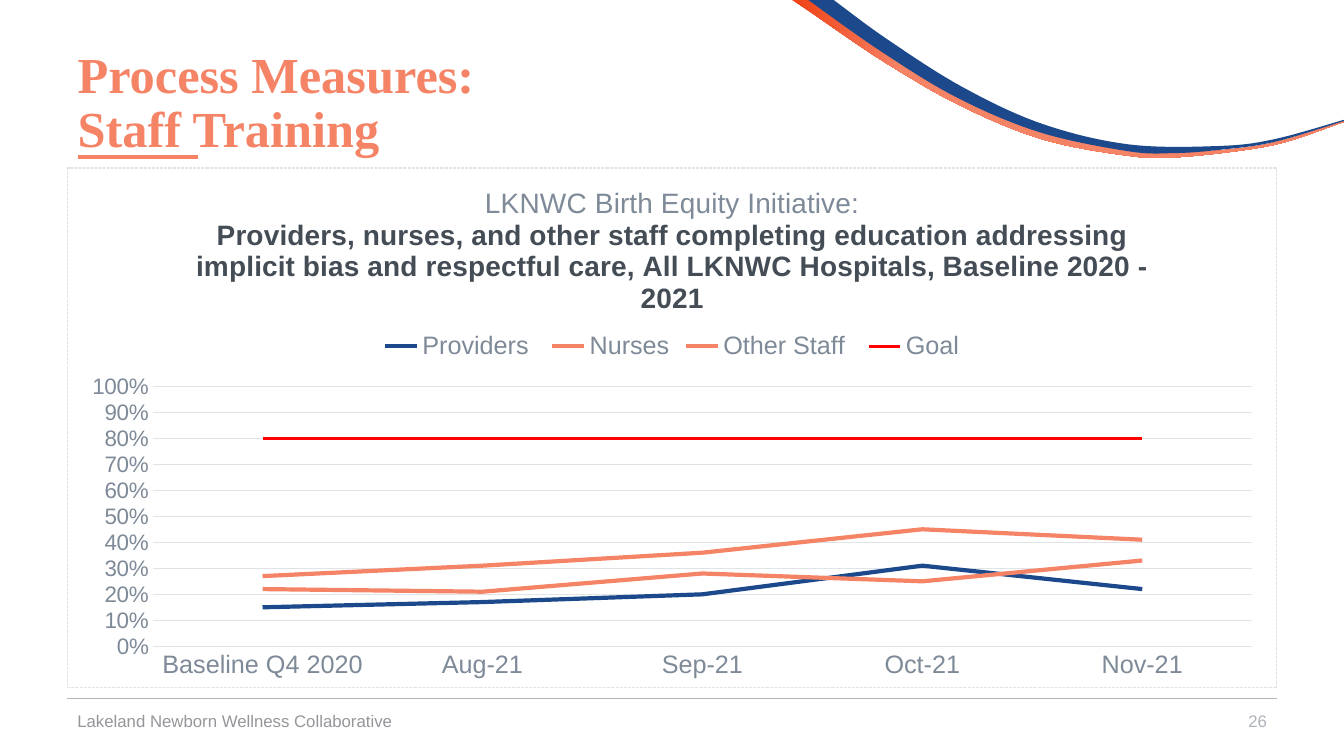
from lxml import etree
from pptx import Presentation
from pptx.chart.data import CategoryChartData
from pptx.dml.color import RGBColor
from pptx.enum import chart as chart_enum, shapes, text
from pptx.oxml import parse_xml
from pptx.oxml.ns import nsdecls, qn
from pptx.util import Cm, Pt

NAVY = RGBColor(0x1C, 0x49, 0x8B)
CORAL = RGBColor(0xF5, 0x83, 0x66)
TITLE_CORAL = RGBColor(0xF5, 0x84, 0x66)
ORANGE = RGBColor(0xF0, 0x41, 0x15)
RED = RGBColor(0xFF, 0x00, 0x00)
SLATE = RGBColor(0x44, 0x4C, 0x55)
GREY_BLUE = RGBColor(0x7E, 0x8A, 0x98)
FOOTER_GREY = RGBColor(0x94, 0x96, 0x99)
RULE_GREY = RGBColor(0xAF, 0xB3, 0xB9)
GRID_GREY = RGBColor(0xE1, 0xE4, 0xE7)


def style_font(font, size, color, name="Arial", bold=False):
    font.size, font.name, font.bold = Pt(size), name, bold
    font.color.rgb = color


def smooth_edge(points, steps=10):
    """Return points in Cm on a Catmull-Rom curve through the given (x, y) points."""
    padded = [points[0], *points, points[-1]]
    curve = []
    for a, b, c, d in zip(padded, padded[1:], padded[2:], padded[3:]):
        for step in range(steps):
            t = step / steps
            curve.append(tuple(
                Cm(0.5 * (2 * q + (r - p) * t + (2 * p - 5 * q + 4 * r - s) * t ** 2
                          + (3 * q - p - 3 * r + s) * t ** 3))
                for p, q, r, s in zip(a, b, c, d)))
    return curve + [(Cm(points[-1][0]), Cm(points[-1][1]))]


presentation = Presentation()
presentation.slide_width, presentation.slide_height = Cm(33.87), Cm(19.05)
slide = presentation.slides.add_slide(presentation.slide_layouts[5])

# Ribbon across the top right corner: upper and lower edge of each band
ribbon_bands = [
    ([(20.45, 0), (22.4, 1.37), (24.33, 2.51), (26.39, 3.38), (28.58, 3.81),
      (29.67, 3.86), (31.34, 3.73), (32.44, 3.51), (33.87, 3.05)],
     [(33.87, 3.07), (32.46, 3.56), (31.37, 3.78), (29.69, 3.96), (28.55, 3.94),
      (26.34, 3.53), (24.26, 2.69), (22.3, 1.57), (20.42, 0.3), (19.96, 0)]),
    ([(21.01, 0), (22.33, 0.97), (24.23, 2.18), (26.26, 3.12), (28.45, 3.64),
      (30.71, 3.68), (32.11, 3.51), (33.87, 3.02)],
     [(33.87, 3.05), (32.11, 3.58), (30.71, 3.78), (29.57, 3.86), (28.42, 3.81),
      (26.19, 3.33), (24.08, 2.44), (22.12, 1.24), (20.37, 0)]),
]
bands = []
for upper_edge, lower_edge in ribbon_bands:
    outline = smooth_edge(upper_edge) + smooth_edge(lower_edge)
    builder = slide.shapes.build_freeform(*outline[0])
    builder.add_line_segments(outline[1:], close=True)
    band = builder.convert_to_shape()
    band.shadow.inherit = False
    band.line.fill.background()
    bands.append(band)
coral_band, navy_band = bands
coral_band.fill.gradient()
coral_band.fill.gradient_angle = 0
for stop, color, position in zip(coral_band.fill.gradient_stops, (ORANGE, CORAL), (0, 0.2)):
    stop.color.rgb, stop.position = color, position
navy_band.fill.solid()
navy_band.fill.fore_color.rgb = NAVY

# Footer rule and title underline
for left, right, top, color, width in [(1.7, 32.18, 17.6, RULE_GREY, 0.5),
                                       (1.96, 5, 3.96, CORAL, 2.5)]:
    rule = slide.shapes.add_connector(shapes.MSO_CONNECTOR.STRAIGHT,
                                      Cm(left), Cm(top), Cm(right), Cm(top))
    rule.line.color.rgb, rule.line.width = color, Pt(width)
    etree.SubElement(rule._element.spPr, qn("a:effectLst"))

title = slide.shapes.title
title.left, title.top, title.width, title.height = Cm(1.7), Cm(0.79), Cm(30.48), Cm(3.68)
title.text_frame.text = "Process Measures:\vStaff Training"
title.text_frame.auto_size = text.MSO_AUTO_SIZE.NONE
title.text_frame.vertical_anchor = text.MSO_ANCHOR.MIDDLE
paragraph = title.text_frame.paragraphs[0]
paragraph.alignment, paragraph.line_spacing = text.PP_ALIGN.LEFT, 0.9
for run in paragraph.runs:
    style_font(run.font, 36, TITLE_CORAL, "Times New Roman", True)

for words, left, width, alignment, color in [
    ("26", 24.56, 7.62, text.PP_ALIGN.RIGHT, RULE_GREY),
    ("Lakeland Newborn Wellness Collaborative", 1.7, 11.43, text.PP_ALIGN.LEFT, FOOTER_GREY),
]:
    footer = slide.shapes.add_textbox(Cm(left), Cm(17.65), Cm(width), Cm(1.02))
    footer.text_frame.word_wrap = True
    footer.text_frame.vertical_anchor = text.MSO_ANCHOR.MIDDLE
    paragraph = footer.text_frame.paragraphs[0]
    paragraph.text, paragraph.alignment = words, alignment
    style_font(paragraph.runs[0].font, 12, color)

# Staff training chart
training = [
    ("Providers ", (0.15, 0.17, 0.2, 0.31, 0.22), NAVY, 3),
    ("Nurses", (0.27, 0.31, 0.36, 0.45, 0.41), CORAL, 3),
    ("Other Staff ", (0.22, 0.21, 0.28, 0.25, 0.33), CORAL, 3),
    ("Goal", (0.8,) * 5, RED, 2.25),
]
chart_data = CategoryChartData(number_format="0%")
chart_data.categories = ["Baseline Q4 2020", "Aug-21", "Sep-21", "Oct-21", "Nov-21"]
for name, values, *_ in training:
    chart_data.add_series(name, values)
chart = slide.shapes.add_chart(chart_enum.XL_CHART_TYPE.LINE, Cm(1.7), Cm(4.22),
                               Cm(30.48), Cm(13.13), chart_data).chart
style_font(chart.font, 10, SLATE)
chart.plots[0].vary_by_categories = False
for series, (_, _, color, width) in zip(chart.plots[0].series, training):
    series.smooth = False
    series.marker.style = chart_enum.XL_MARKER_STYLE.NONE
    series.format.line.color.rgb, series.format.line.width = color, Pt(width)

title_frame = chart.chart_title.text_frame
title_frame.text = (
    "LKNWC Birth Equity Initiative:\n"
    "Providers, nurses, and other staff completing education addressing "
    "implicit bias and respectful care, All LKNWC Hospitals, Baseline 2020 - 2021")
for paragraph, color, bold in zip(title_frame.paragraphs, (GREY_BLUE, SLATE), (False, True)):
    style_font(paragraph.runs[0].font, 20, color, bold=bold)
chart.chart_title.include_in_layout = False

chart.has_legend = True
chart.legend.position = chart_enum.XL_LEGEND_POSITION.TOP
chart.legend.include_in_layout = False
style_font(chart.legend.font, 18, GREY_BLUE)

months, share = chart.category_axis, chart.value_axis
for axis, size in ((months, 18), (share, 16)):
    axis.major_tick_mark = axis.minor_tick_mark = chart_enum.XL_TICK_MARK.NONE
    style_font(axis.tick_labels.font, size, GREY_BLUE)
share.minimum_scale, share.maximum_scale, share.major_unit = 0, 1, 0.1
share.tick_labels.number_format, share.tick_labels.number_format_is_linked = "0%", False
share.format.line.fill.background()
for line in (months.format.line, share.major_gridlines.format.line):
    line.color.rgb, line.width = GRID_GREY, Pt(0.75)

# Plot position, then white background with dashed border
plot_area = chart.element.find(".//" + qn("c:plotArea"))
for old_layout in plot_area.findall(qn("c:layout")):
    plot_area.remove(old_layout)
plot_area.insert(0, parse_xml(
    f'<c:layout {nsdecls("c")}><c:manualLayout><c:layoutTarget val="inner"/>'
    '<c:xMode val="edge"/><c:yMode val="edge"/><c:x val="0.07"/><c:y val="0.42"/>'
    '<c:w val="0.91"/><c:h val="0.5"/></c:manualLayout></c:layout>'))
chart.element.find(qn("c:chart")).addnext(parse_xml(
    f'<c:spPr {nsdecls("c", "a")}><a:solidFill><a:srgbClr val="FFFFFF"/></a:solidFill>'
    f'<a:ln w="{Pt(0.75)}"><a:solidFill><a:srgbClr val="{GRID_GREY}"/></a:solidFill>'
    '<a:prstDash val="sysDash"/></a:ln></c:spPr>'))

presentation.save("out.pptx")
